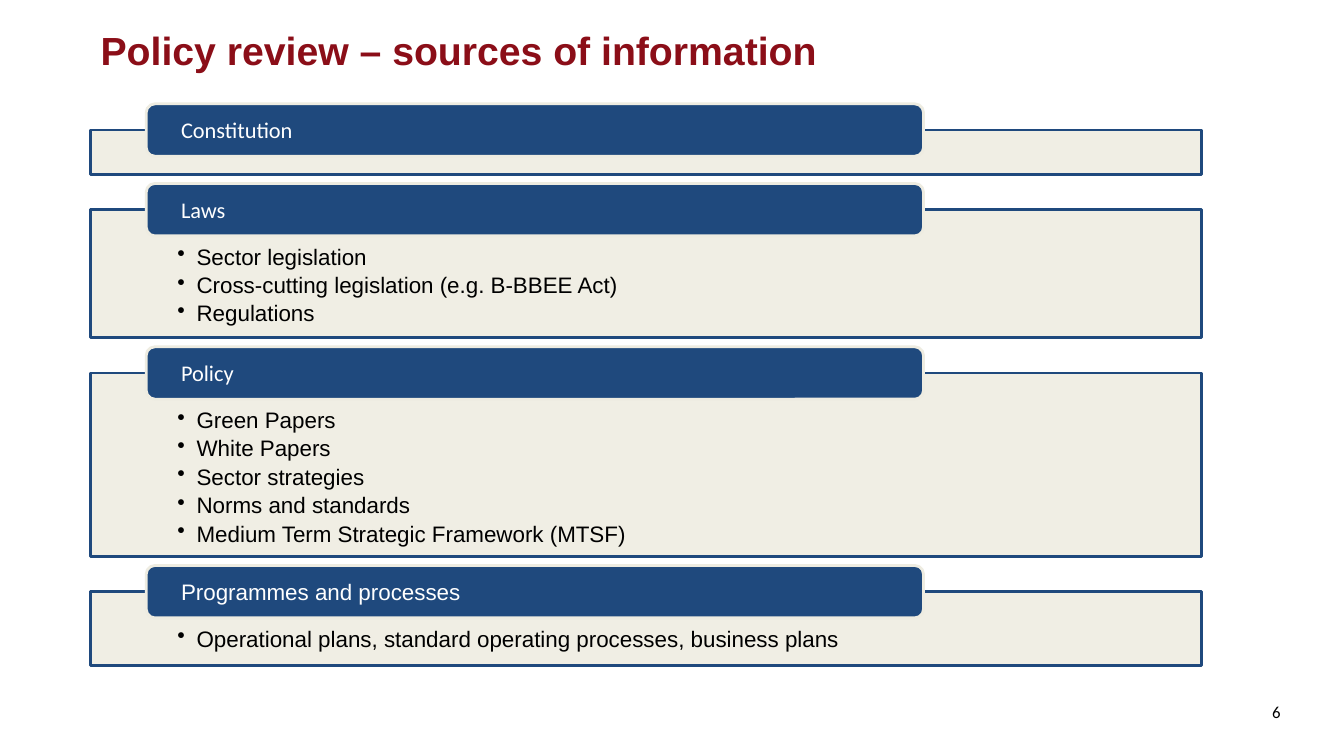
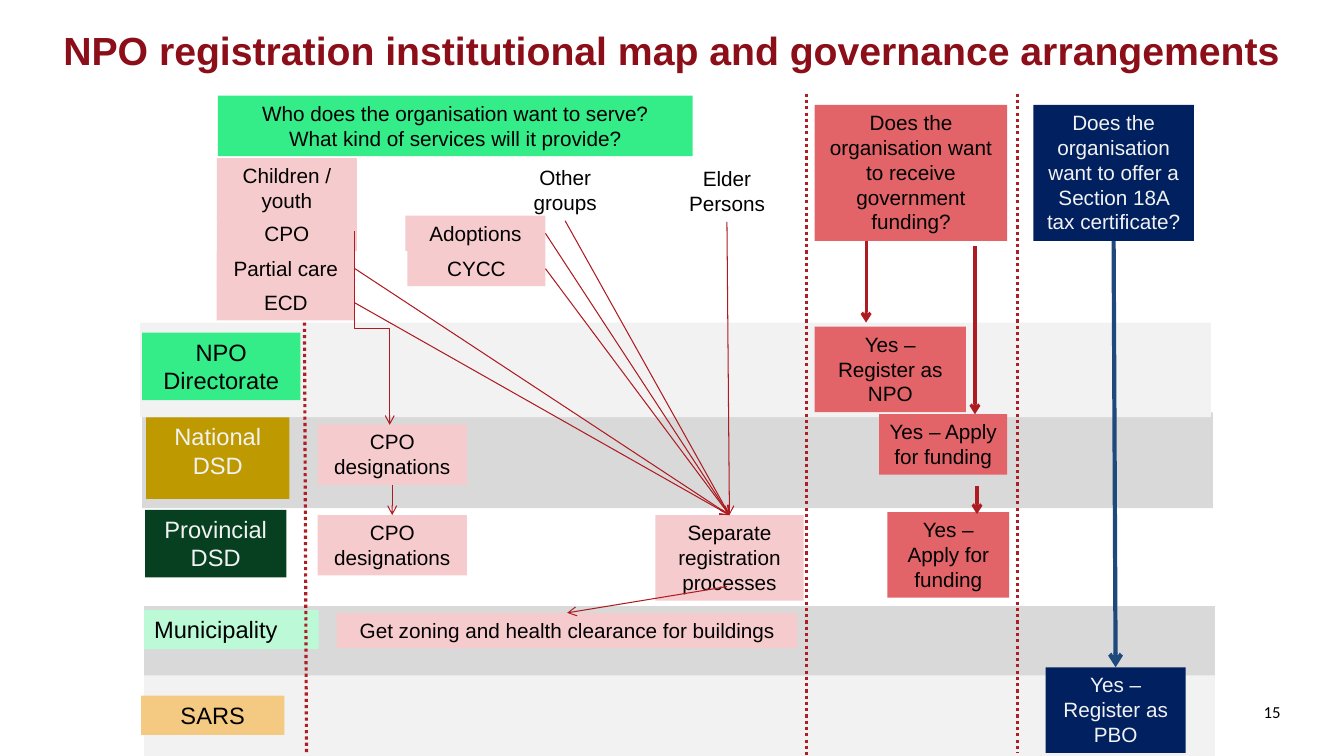
from dataclasses import dataclass

from pptx import Presentation
from pptx import util as u
from pptx.dml.color import RGBColor
from pptx.enum import dml, shapes, text
from pptx.oxml.ns import qn
from pptx.oxml.xmlchemy import OxmlElement

PX = 9144  # one px is a hundredth of an inch
LEFT, CENTER, RIGHT = text.PP_ALIGN.LEFT, text.PP_ALIGN.CENTER, text.PP_ALIGN.RIGHT
TOP, MIDDLE = text.MSO_ANCHOR.TOP, text.MSO_ANCHOR.MIDDLE
SIDE_TOP, SIDE_LEFT, SIDE_BOTTOM, SIDE_RIGHT = range(4)


@dataclass(frozen=True)
class Theme:
    font: str = "Arial"
    label_font: str = "Calibri"
    title_size: float = 28
    list_size: float = 16
    role_size: float = 16.9
    box_size: float = 14.8
    number_size: float = 12
    title: str = "8B0E18"
    black: str = "000000"
    white: str = "FFFFFF"
    pale: str = "F2F2F2"
    grey: str = "D9D9D9"
    blue: str = "1F497D"
    cream: str = "EEECE1"
    panel: str = "F0EEE4"
    navy: str = "002060"
    green: str = "34EC88"
    mint: str = "BBF9D7"
    forest: str = "064021"
    gold: str = "BE9A00"
    sand: str = "F4CA82"
    pink: str = "F6CBCD"
    coral: str = "E36468"
    arrow: str = "AE1B20"
    divider: str = "AE1F24"


THEME = Theme()


@dataclass(frozen=True)
class Area:
    left: int
    top: int
    width: int
    height: int

    def emu(self) -> list[int]:
        return [n * PX for n in (self.left, self.top, self.width, self.height)]


@dataclass(frozen=True)
class Style:
    size: float
    color: str = THEME.black
    font: str = THEME.font
    align: text.PP_ALIGN = LEFT
    anchor: text.MSO_ANCHOR = TOP
    bold: bool = False
    margins: tuple[int, int, int, int] = (10, 5, 10, 5)


@dataclass(frozen=True)
class Section:
    heading: str
    height: int
    items: tuple[str, ...] = ()
    heading_font: str = THEME.label_font


@dataclass(frozen=True)
class Box:
    key: str
    words: str
    area: Area
    fill: str
    size: float = THEME.box_size
    color: str = THEME.black
    align: text.PP_ALIGN = CENTER


@dataclass(frozen=True)
class Link:
    start: str
    start_side: int
    end: str
    end_side: int = SIDE_TOP
    color: str = THEME.arrow
    width: float = 0.75


@dataclass(frozen=True)
class Line:
    points: tuple[int, int, int, int]
    color: str = THEME.arrow
    width: float = 2.25
    dotted: bool = False


SECTIONS = (
    Section("Constitution", 44),
    Section("Laws", 127, ("Sector legislation", "Cross-cutting legislation (e.g. B-BBEE Act)",
                          "Regulations")),
    Section("Policy", 182, ("Green Papers", "White Papers", "Sector strategies",
                            "Norms and standards", "Medium Term Strategic Framework (MTSF)")),
    Section("Programmes and processes", 73,
            ("Operational plans, standard operating processes, business plans",), THEME.font),
)

BANDS = (
    (Area(141, 409, 1062, 95), THEME.grey),
    (Area(143, 668, 1062, 82), THEME.pale),
    (Area(143, 598, 1062, 72), THEME.grey),
    (Area(139, 320, 1062, 94), THEME.pale),
    (Area(143, 506, 1062, 95), THEME.white),
)

BOXES = (
    # Institutions
    Box("npo", "NPO Directorate", Area(141, 330, 157, 67), THEME.green, THEME.role_size),
    Box("national", "National DSD", Area(145, 414, 142, 81), THEME.gold, THEME.role_size,
        THEME.pale),
    Box("provincial", "Provincial DSD", Area(144, 506, 140, 67), THEME.forest, THEME.role_size,
        THEME.pale),
    Box("municipality", "Municipality", Area(143, 605, 173, 39), THEME.mint, THEME.role_size,
        align=LEFT),
    Box("sars", "SARS", Area(140, 690, 142, 39), THEME.sand, THEME.role_size),
    # Groups served
    Box("serve", "Who does the organisation want to serve?\nWhat kind of services will it provide?",
        Area(216, 95, 471, 60), THEME.green),
    Box("children", "Children / youth", Area(215, 157, 139, 60), THEME.pink),
    Box("other", "Other groups", Area(491, 159, 139, 60), THEME.white),
    Box("elder", "Elder Persons", Area(650, 160, 142, 60), THEME.white),
    Box("partial", "Partial care", Area(215, 249, 137, 35), THEME.pink),
    Box("cpo", "CPO", Area(215, 214, 139, 35), THEME.pink),
    Box("ecd", "ECD", Area(215, 283, 137, 35), THEME.pink),
    Box("cycc", "CYCC", Area(404, 249, 137, 35), THEME.pink),
    Box("adoptions", "Adoptions", Area(402, 214, 139, 35), THEME.pink),
    # Registration steps
    Box("cpo national", "CPO designations", Area(315, 421, 148, 60), THEME.pink),
    Box("cpo provincial", "CPO designations", Area(315, 511, 148, 60), THEME.pink),
    Box("separate", "Separate registration processes", Area(650, 511, 147, 85), THEME.pink),
    Box("zoning", "Get zoning and health clearance for buildings", Area(334, 608, 457, 35),
        THEME.pink),
    # Government funding
    Box("funding", "Does the organisation want to receive government funding?",
        Area(808, 104, 191, 135), THEME.coral),
    Box("register npo", "Yes – Register as NPO", Area(808, 324, 150, 85), THEME.coral),
    Box("apply national", "Yes – Apply for funding", Area(872, 411, 127, 60), THEME.coral),
    Box("apply provincial", "Yes – Apply for funding", Area(880, 508, 121, 85), THEME.coral),
    # Tax certificate
    Box("tax", "Does the organisation want to offer a Section 18A tax certificate?",
        Area(1025, 104, 159, 135), THEME.navy, color=THEME.pale),
    Box("register pbo", "Yes – Register as PBO", Area(1037, 662, 139, 85), THEME.navy,
        color=THEME.pale),
)

LINKS = (
    *(Link(group, SIDE_RIGHT, "separate") for group in ("partial", "ecd", "cycc", "adoptions")),
    *(Link(group, SIDE_BOTTOM, "separate") for group in ("other", "elder")),
    Link("cpo national", SIDE_BOTTOM, "cpo provincial"),
    Link("tax", SIDE_BOTTOM, "register pbo", color=THEME.blue, width=3),
)

LINES = (
    Line((859, 239, 859, 320)),
    Line((967, 244, 967, 411)),
    Line((969, 482, 969, 510)),
    Line((800, 93, 800, 750), THEME.divider, dotted=True),
    Line((302, 320, 304, 747), THEME.divider, dotted=True),
    Line((1009, 93, 1009, 747), THEME.divider, dotted=True),
)


def write(shape, words: str, style: Style) -> None:
    frame = shape.text_frame
    frame.word_wrap = True
    frame.vertical_anchor = style.anchor
    (frame.margin_left, frame.margin_top,
     frame.margin_right, frame.margin_bottom) = (n * PX for n in style.margins)
    frame.text = words
    for paragraph in frame.paragraphs:
        paragraph.alignment = style.align
        for run in paragraph.runs:
            run.font.name = style.font
            run.font.size = u.Pt(style.size)
            run.font.bold = style.bold
            run.font.color.rgb = RGBColor.from_string(style.color)


def add_block(slide, area: Area, fill: str, outline: str = "", rounded: bool = False):
    kind = shapes.MSO_SHAPE.ROUNDED_RECTANGLE if rounded else shapes.MSO_SHAPE.RECTANGLE
    shape = slide.shapes.add_shape(kind, *area.emu())
    shape.shadow.inherit = False
    shape.fill.solid()
    shape.fill.fore_color.rgb = RGBColor.from_string(fill)
    if outline:
        shape.line.color.rgb = RGBColor.from_string(outline)
        shape.line.width = u.Pt(2)
    else:
        shape.line.fill.background()
    return shape


def add_line(slide, line: Line, kind=shapes.MSO_CONNECTOR.STRAIGHT):
    connector = slide.shapes.add_connector(kind, *(n * PX for n in line.points))
    connector.line.color.rgb = RGBColor.from_string(line.color)
    connector.line.width = u.Pt(line.width)
    properties = connector._element.spPr
    if line.dotted:
        connector.line.dash_style = dml.MSO_LINE.ROUND_DOT
    else:
        head = OxmlElement("a:tailEnd")
        head.set("type", "arrow")
        properties.find(qn("a:ln")).append(head)
    properties.append(OxmlElement("a:effectLst"))
    return connector


def add_link(slide, link: Link, boxes: dict) -> None:
    connector = add_line(slide, Line((0, 0, 100, 100), link.color, link.width))
    connector.begin_connect(boxes[link.start], link.start_side)
    connector.end_connect(boxes[link.end], link.end_side)


def add_slide(presentation, title: str, title_area: Area, number: int):
    """Add a blank slide with the shared title and page number."""
    slide = presentation.slides.add_slide(presentation.slide_layouts[6])
    write(slide.shapes.add_textbox(*title_area.emu()), title,
          Style(THEME.title_size, THEME.title, anchor=MIDDLE, bold=True))
    write(slide.shapes.add_textbox(*Area(1204, 691, 76, 39).emu()), str(number),
          Style(THEME.number_size, font=THEME.label_font, align=RIGHT))
    return slide


def add_bullets(shape) -> None:
    for paragraph in shape.text_frame.paragraphs:
        properties = paragraph._p.get_or_add_pPr()
        properties.set("marL", str(19 * PX))
        properties.set("indent", str(-19 * PX))
        bullet = OxmlElement("a:buChar")
        bullet.set("char", "•")
        properties.append(bullet)
        paragraph.line_spacing = 0.9
        paragraph.space_after = u.Pt(3)


def build_sources(presentation) -> None:
    slide = add_slide(presentation, "Policy review – sources of information",
                      Area(90, 27, 1151, 45), 6)
    top, gap = 129, 35
    for section in SECTIONS:
        panel = add_block(slide, Area(90, top, 1102, section.height), THEME.panel, THEME.blue)
        if section.items:
            write(panel, "\n".join(section.items),
                  Style(THEME.list_size, margins=(86, 36, 86, 12)))
            add_bullets(panel)
        tab = add_block(slide, Area(145, top - 26, 771, 52), THEME.blue, THEME.cream, rounded=True)
        write(tab, section.heading, Style(THEME.list_size, THEME.white, section.heading_font,
                                          anchor=MIDDLE, margins=(32, 0, 32, 0)))
        top += section.height + gap


def build_map(presentation) -> None:
    slide = add_slide(presentation, "NPO registration institutional map and governance arrangements",
                      Area(53, 27, 1239, 45), 15)
    for area, fill in BANDS:
        add_block(slide, area, fill)
    boxes = {}
    for box in BOXES:
        boxes[box.key] = add_block(slide, box.area, box.fill)
        write(boxes[box.key], box.words, Style(box.size, box.color, align=box.align))
    for line in LINES:
        add_line(slide, line)
    for link in LINKS:
        add_link(slide, link, boxes)
    # From inside the separate processes to the zoning step
    clearance = add_line(slide, Line((721, 582, 563, 608), width=0.75))
    clearance.end_connect(boxes["zoning"], SIDE_TOP)
    # Elbow that leaves and arrives vertically, so it is turned a quarter
    elbow = add_line(slide, Line((273, 308, 465, 343), width=0.75), shapes.MSO_CONNECTOR.ELBOW)
    transform = elbow._element.spPr.find(qn("a:xfrm"))
    transform.set("rot", str(270 * 60000))
    transform.set("flipH", "1")


def main() -> None:
    presentation = Presentation()
    presentation.slide_width, presentation.slide_height = 1333 * PX, 750 * PX
    build_sources(presentation)
    build_map(presentation)
    presentation.save("out.pptx")


if __name__ == "__main__":
    main()
